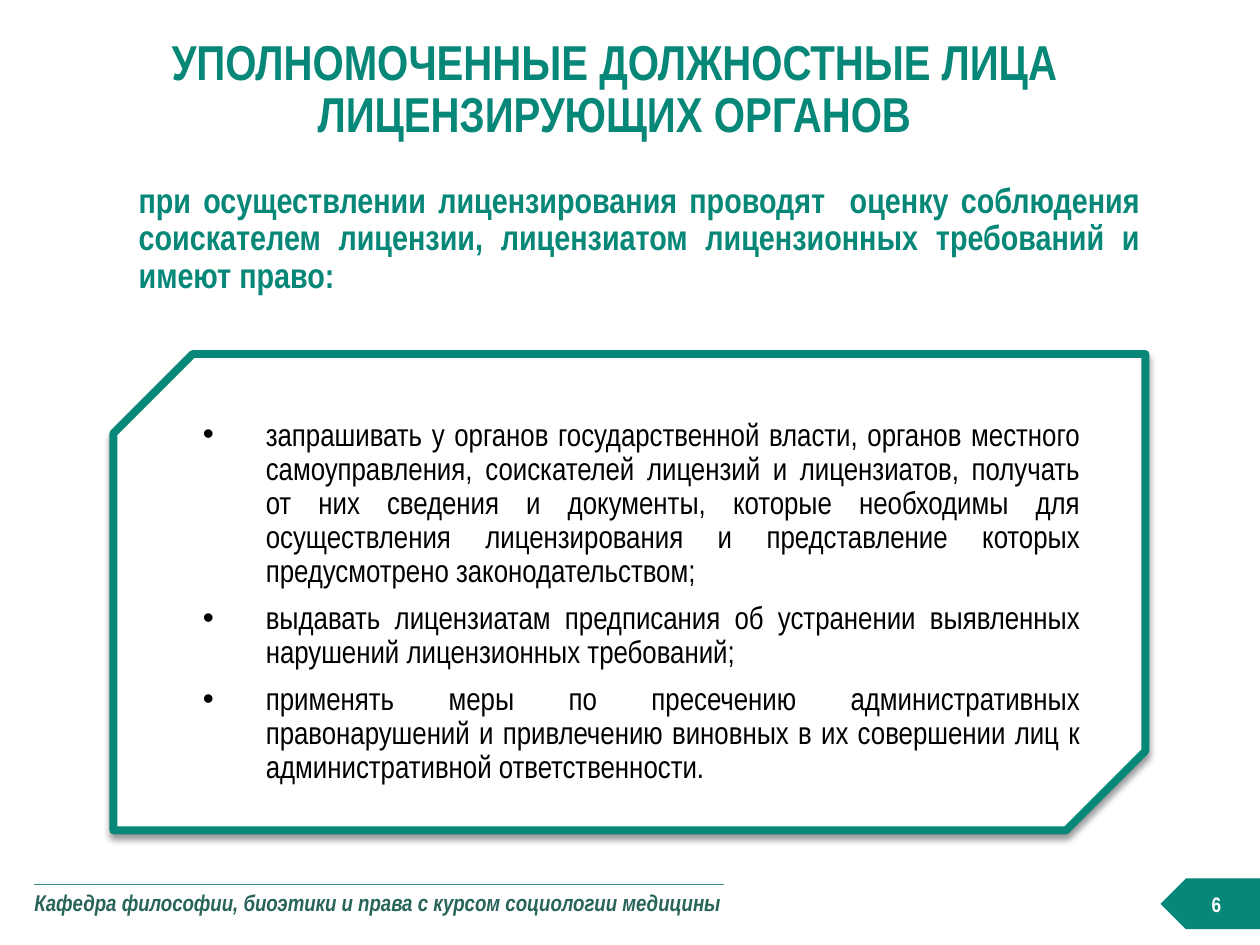
"""Build the slide on the powers of licensing officials."""
import pptx
import pptx.dml.color
import pptx.enum.shapes
import pptx.enum.text
import pptx.oxml
import pptx.util
from lxml import etree

Pt = pptx.util.Pt
SHAPE = pptx.enum.shapes.MSO_SHAPE
ALIGN = pptx.enum.text.PP_ALIGN
ANCHOR = pptx.enum.text.MSO_ANCHOR
NS = 'xmlns:a="http://schemas.openxmlformats.org/drawingml/2006/main"'
GREEN, WHITE = "078777", "FFFFFF"


def rgb(value):
    return pptx.dml.color.RGBColor.from_string(value)


def write(tf, text, size=18, color=GREEN, bold=False, italic=False, align=ALIGN.LEFT,
          anchor=ANCHOR.TOP, margins=(0, 0, 0, 0), spacing=1, before=0, bullet=None):
    tf.word_wrap = True
    tf.vertical_anchor = anchor
    tf.margin_left, tf.margin_top, tf.margin_right, tf.margin_bottom = map(Pt, margins)
    for i, line in enumerate(text.split("\n")):
        p = tf.paragraphs[0] if i == 0 else tf.add_paragraph()
        p.alignment, p.line_spacing = align, spacing
        p.space_before = Pt(before if i else 0)
        if bullet:
            pPr = p._p.get_or_add_pPr()
            pPr.set("marL", str(Pt(50)))
            pPr.set("indent", str(Pt(-36)))
            pPr.append(pptx.oxml.parse_xml(f'<a:buFont {NS} typeface="Arial"/>'))
            pPr.append(pptx.oxml.parse_xml(f'<a:buChar {NS} char="{bullet}"/>'))
        r = p.add_run()
        r.text = line
        r.font.name, r.font.size = "Arial Narrow", Pt(size)
        r.font.bold, r.font.italic = bold, italic
        r.font.color.rgb = rgb(color)


prs = pptx.Presentation()
prs.slide_width, prs.slide_height = Pt(720), Pt(540)
slide = prs.slides.add_slide(prs.slide_layouts[6])
shapes = slide.shapes

table = shapes.add_table(1, 1, Pt(19.7), Pt(505.5), Pt(394), Pt(31)).table
table.first_row = table.horz_banding = False
cell = table.cell(0, 0)
write(cell.text_frame, "Кафедра философии, биоэтики и права с курсом социологии медицины",
      size=13, color="28645A", bold=True, italic=True)
cell.margin_left = cell.margin_right = cell.margin_bottom = 0
cell.margin_top = Pt(5.76)
cell.vertical_anchor = ANCHOR.TOP
cell.fill.background()
tcPr = cell._tc.get_or_add_tcPr()
for i, side in enumerate(("lnL", "lnR", "lnT", "lnB")):
    paint = '<a:solidFill><a:srgbClr val="388E84"/></a:solidFill>' if side == "lnT" else "<a:noFill/>"
    tcPr.insert(i, etree.fromstring(f'<a:{side} {NS} w="12700">{paint}</a:{side}>'))

s = shapes.add_shape(SHAPE.SNIP_2_DIAG_RECTANGLE, Pt(64.8), Pt(202.3), Pt(589.7), Pt(272.2))
s.adjustments[0], s.adjustments[1] = 0.16667, 0
s.fill.solid()
s.fill.fore_color.rgb = rgb(WHITE)
s.line.color.rgb = rgb(GREEN)
s.line.width = Pt(4.5)
s.shadow.inherit = False
effects = s._element.spPr.find("{*}effectLst")
effects.append(pptx.oxml.parse_xml(
    f'<a:outerShdw {NS} blurRad="{Pt(4)}" dist="{Pt(3)}" dir="5400000" rotWithShape="0">'
    '<a:srgbClr val="000000"><a:alpha val="40000"/></a:srgbClr></a:outerShdw>'))
write(s.text_frame,
      "запрашивать у органов государственной власти, органов местного самоуправления, "
      "соискателей лицензий и лицензиатов, получать от них сведения и документы, которые "
      "необходимы для осуществления лицензирования и представление которых предусмотрено "
      "законодательством;\n"
      "выдавать лицензиатам предписания об устранении выявленных нарушений лицензионных "
      "требований;\n"
      "применять меры по пресечению административных правонарушений и привлечению виновных "
      "в их совершении лиц к административной ответственности.",
      color="000000", align=ALIGN.JUSTIFY, margins=(14.4,) * 4, spacing=0.9, before=7.5,
      bullet="•")

s = shapes.add_shape(SHAPE.PENTAGON, Pt(663.2), Pt(502), Pt(56.8), Pt(29))
s._element.spPr.xfrm.set("flipH", "1")
s.fill.solid()
s.fill.fore_color.rgb = rgb(GREEN)
s.line.fill.background()
s.shadow.inherit = False
write(s.text_frame, "6", size=12, color=WHITE, bold=True, align=ALIGN.CENTER,
      anchor=ANCHOR.MIDDLE, margins=(7.2, 3.6, 7.2, 3.6))

s = shapes.add_textbox(Pt(82), Pt(26.6), Pt(538), Pt(50.4))
write(s.text_frame, "УПОЛНОМОЧЕННЫЕ ДОЛЖНОСТНЫЕ ЛИЦА ЛИЦЕНЗИРУЮЩИХ ОРГАНОВ",
      size=28, bold=True, align=ALIGN.CENTER, anchor=ANCHOR.MIDDLE, spacing=0.9)

s = shapes.add_textbox(Pt(64.8), Pt(88.6), Pt(589.7), Pt(96.5))
write(s.text_frame,
      "при осуществлении лицензирования проводят  оценку соблюдения соискателем лицензии, "
      "лицензиатом лицензионных требований и имеют право:",
      size=20, bold=True, align=ALIGN.JUSTIFY, anchor=ANCHOR.MIDDLE,
      margins=(14.4, 2.9, 2.9, 2.9), spacing=0.9)

prs.save("out.pptx")
